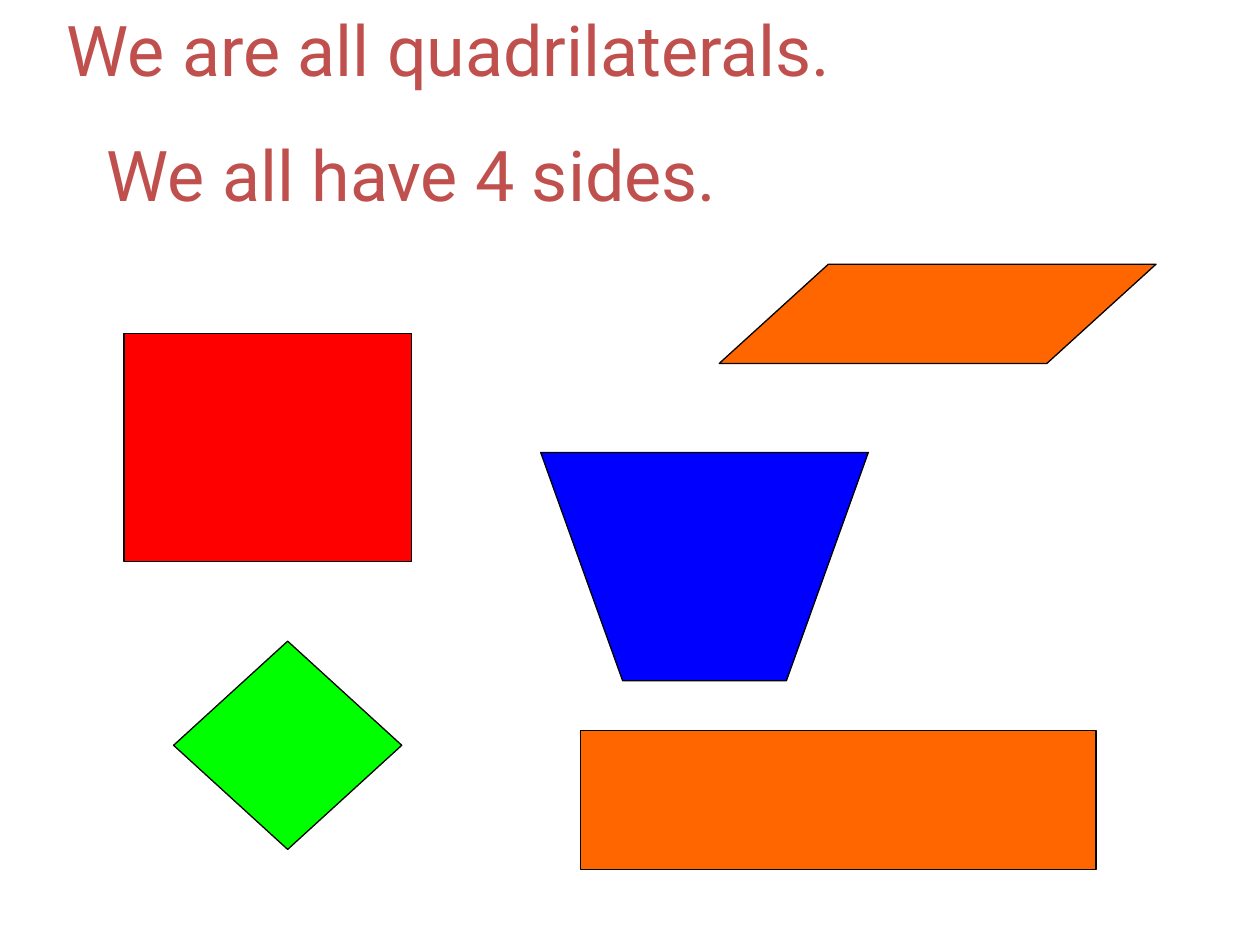
from dataclasses import dataclass

from pptx import Presentation
from pptx.dml.color import RGBColor
from pptx.enum.shapes import MSO_SHAPE as Preset
from pptx.enum.text import MSO_ANCHOR, MSO_AUTO_SIZE, PP_ALIGN
from pptx.util import Pt


@dataclass(frozen=True)
class Theme:
    font: str = "Roboto"
    text_size: float = 40
    text: str = "C0504D"
    outline: str = "000000"
    outline_width: float = 0.75
    red: str = "FF0000"
    orange: str = "FF6600"
    blue: str = "0000FF"
    green: str = "00FF00"


THEME = Theme()
TITLE_ONLY = 5


def color(value):
    return RGBColor.from_string(value)


def write_statement(shape, text):
    """Set one line of large text in a title or text box."""
    frame = shape.text_frame
    frame.text = text
    frame.word_wrap = True
    frame.auto_size = MSO_AUTO_SIZE.NONE
    frame.vertical_anchor = MSO_ANCHOR.MIDDLE
    paragraph = frame.paragraphs[0]
    paragraph.alignment = PP_ALIGN.LEFT
    paragraph.font.name = THEME.font
    paragraph.font.size = Pt(THEME.text_size)
    paragraph.font.color.rgb = color(THEME.text)


def add_title(slide, text, left, top, width, height):
    title = slide.shapes.title
    title.left, title.top = Pt(left), Pt(top)
    title.width, title.height = Pt(width), Pt(height)
    write_statement(title, text)


def add_statement(slide, text, left, top, width, height):
    box = slide.shapes.add_textbox(Pt(left), Pt(top), Pt(width), Pt(height))
    write_statement(box, text)


def paint(shape, fill):
    """Give a quadrilateral its fill and thin outline."""
    shape.shadow.inherit = False
    shape.fill.solid()
    shape.fill.fore_color.rgb = color(fill)
    shape.line.color.rgb = color(THEME.outline)
    shape.line.width = Pt(THEME.outline_width)


def add_quadrilateral(slide, preset, fill, left, top, width, height):
    shape = slide.shapes.add_shape(
        preset, Pt(left), Pt(top), Pt(width), Pt(height))
    paint(shape, fill)
    return shape


def add_trapezoid(slide, fill, left, top, width, height):
    """Draw a trapezoid whose lower side is half as long as its upper side."""
    inset = width / 4
    right, bottom = left + width, top + height
    builder = slide.shapes.build_freeform(Pt(left), Pt(top))
    corners = [(left + inset, bottom), (right - inset, bottom), (right, top)]
    builder.add_line_segments([(Pt(x), Pt(y)) for x, y in corners], close=True)
    paint(builder.convert_to_shape(), fill)


def main():
    presentation = Presentation()
    presentation.slide_width, presentation.slide_height = Pt(720), Pt(540)
    slide = presentation.slides.add_slide(
        presentation.slide_layouts[TITLE_ONLY])

    # Statements
    add_title(slide, "We are all quadrilaterals.", 31, 0, 570, 55.5)
    add_statement(slide, "We all have 4 sides.", 54, 71.5, 584, 55.5)

    # Quadrilaterals
    add_quadrilateral(slide, Preset.RECTANGLE, THEME.red, 70.8, 190.6, 164.4, 130.4)
    parallelogram = add_quadrilateral(
        slide, Preset.PARALLELOGRAM, THEME.orange, 411, 151, 249.6, 56.7)
    parallelogram.adjustments[0] = 1.1
    add_trapezoid(slide, THEME.blue, 309, 258.6, 187.2, 130.4)
    add_quadrilateral(slide, Preset.DIAMOND, THEME.green, 99.2, 366.4, 130.4, 119)
    add_quadrilateral(slide, Preset.RECTANGLE, THEME.orange, 331.7, 417.4, 294.7, 79.4)

    presentation.save("out.pptx")


if __name__ == "__main__":
    main()
